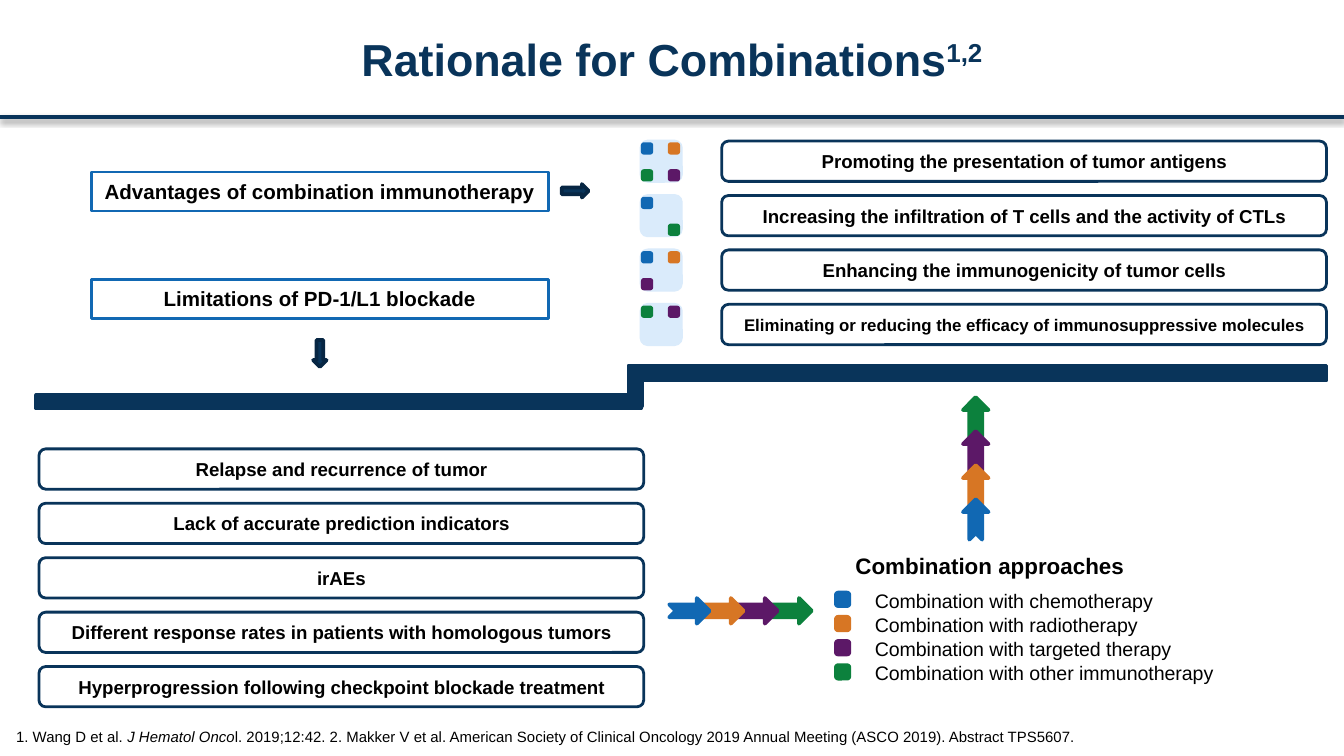
"""Builds the slide on the rationale for combination immunotherapy."""
from lxml import etree
from pptx import Presentation
from pptx.dml.color import RGBColor
from pptx.enum.shapes import MSO_CONNECTOR, MSO_SHAPE
from pptx.enum.text import MSO_ANCHOR, PP_ALIGN
from pptx.oxml.ns import qn
from pptx.util import Inches, Pt

RECT = MSO_SHAPE.RECTANGLE
ROUND = MSO_SHAPE.ROUNDED_RECTANGLE
ARROW = MSO_SHAPE.RIGHT_ARROW
NOTCHED = MSO_SHAPE.NOTCHED_RIGHT_ARROW
STRAIGHT = MSO_CONNECTOR.STRAIGHT
LEFT, CENTER = PP_ALIGN.LEFT, PP_ALIGN.CENTER
TOP, MIDDLE, BOTTOM = MSO_ANCHOR.TOP, MSO_ANCHOR.MIDDLE, MSO_ANCHOR.BOTTOM

COLORS = {
    "navy": "09345A", "dark": "072643", "white": "FFFFFF", "black": "000000",
    "pale": "DAEBFB", "chemo": "1168B3", "radio": "D77624",
    "targeted": "5C1867", "immuno": "0C813D",
}

prs = Presentation()
prs.slide_width = Inches(10)
prs.slide_height = prs.slide_width * 9 // 16
s = prs.slides.add_slide(prs.slide_layouts[6])


def add_shape(kind, x, y, w, h, fill, line, weight=2, rotation=0):
    sp = s.shapes.add_shape(kind, Inches(x), Inches(y), Inches(w), Inches(h))
    sp.shadow.inherit = False
    sp.rotation = rotation
    if fill:
        sp.fill.solid()
        sp.fill.fore_color.rgb = RGBColor.from_string(COLORS[fill])
    else:
        sp.fill.background()
    sp.line.color.rgb = RGBColor.from_string(COLORS[line])
    sp.line.width = Pt(weight)
    return sp


def add_text(text, sp=None, box=None, size=10, bold=False, color="black",
             align=CENTER, anchor=MIDDLE, margins=(0.1, 0.05, 0.1, 0.05)):
    sp = sp or s.shapes.add_textbox(*[Inches(v) for v in box])
    tf = sp.text_frame
    tf.word_wrap = True
    tf.vertical_anchor = anchor
    tf.margin_left, tf.margin_top, tf.margin_right, tf.margin_bottom = [
        Inches(m) for m in margins]
    p = tf.paragraphs[0]
    p.alignment = align
    for part in [text] if isinstance(text, str) else text:
        r = p.add_run()
        r.text = part
        r.font.name = "Arial"
        r.font.size = Pt(size)
        r.font.bold = bold
        r.font.color.rgb = RGBColor.from_string(COLORS[color])
    return p.runs


rule = s.shapes.add_connector(STRAIGHT, 0, Inches(0.87), prs.slide_width, Inches(0.87))
rule.line.color.rgb = RGBColor.from_string(COLORS["navy"])
rule.line.width = Pt(2)
effects = etree.SubElement(rule.element.spPr, qn("a:effectLst"))
shadow = etree.SubElement(
    effects, qn("a:outerShdw"), blurRad=str(Pt(3.1)), dist=str(Pt(1.6)),
    dir="5400000", rotWithShape="0")
shade = etree.SubElement(shadow, qn("a:srgbClr"), val=COLORS["black"])
etree.SubElement(shade, qn("a:alpha"), val="38000")

title = add_text(["Rationale for Combinations", "1,2"], box=(0.1, 0.03, 9.8, 0.81),
                 size=24, bold=True, color="navy")
title[1].font._element.set("baseline", "30000")

citation = add_text(
    ["1. Wang D et al. ", "J Hematol Onco",
     "l. 2019;12:42. 2. Makker V et al. American Society of Clinical Oncology "
     "2019 Annual Meeting (ASCO 2019). Abstract TPS5607."],
    box=(0.07, 5.28, 8.5, 0.27), size=8, align=LEFT, anchor=BOTTOM,
    margins=(0.05, 0.05, 0.1, 0))
citation[1].font.italic = True

ROW_STEP = 1.62 / 4
limitations = [
    "Relapse and recurrence of tumor",
    "Lack of accurate prediction indicators",
    "irAEs",
    "Different response rates in patients with homologous tumors",
    "Hyperprogression following checkpoint blockade treatment",
]
for i, text in enumerate(limitations):
    sp = add_shape(ROUND, 0.29, 3.34 + i * ROW_STEP, 4.5, 0.3, "white", "navy", 1.5)
    add_text(text, sp=sp, bold=True)

advantages = [
    ("Promoting the presentation of tumor antigens", 10,
     [("chemo", 0, 0), ("radio", 1, 0), ("targeted", 1, 1), ("immuno", 0, 1)]),
    ("Increasing the infiltration of T cells and the activity of CTLs", 10,
     [("chemo", 0, 0), ("immuno", 1, 1)]),
    ("Enhancing the immunogenicity of tumor cells", 10,
     [("chemo", 0, 0), ("radio", 1, 0), ("targeted", 0, 1)]),
    ("Eliminating or reducing the efficacy of immunosuppressive molecules", 9,
     [("immuno", 0, 0), ("targeted", 1, 0)]),
]
for i, (text, size, markers) in enumerate(advantages):
    y = 1.05 + i * ROW_STEP
    sp = add_shape(ROUND, 5.37, y, 4.5, 0.3, "white", "navy", 1.5)
    add_text(text, sp=sp, size=size, bold=True)
    add_shape(ROUND, 4.77, y, 0.3, 0.3, "pale", "pale", 1.5)
    for color, col, row in markers:
        add_shape(ROUND, 4.78 + col * 0.2, y + 0.02 + row * 0.2, 0.07, 0.07,
                  color, color, 1.5)

for y, text in [(1.28, "Advantages of combination immunotherapy"),
                (2.08, "Limitations of PD-1/L1 blockade")]:
    sp = add_shape(RECT, 0.68, y, 3.4, 0.29, None, "chemo", 1.5)
    add_text(text, sp=sp, size=11, bold=True, anchor=TOP)
add_shape(ARROW, 4.18, 1.37, 0.2, 0.1, "navy", "dark")
add_shape(ARROW, 2.28, 2.58, 0.2, 0.1, "navy", "dark", rotation=90)

for x, y, w, h in [(4.68, 2.72, 5.19, 0.11), (4.68, 2.72, 0.1, 0.3),
                   (0.27, 2.94, 4.5, 0.1)]:
    add_shape(RECT, x, y, w, h, "navy", "navy")

add_text("Combination approaches", box=(6.04, 4.06, 2.65, 0.3), size=12,
         bold=True, anchor=TOP)
approaches = [
    ("chemo", "Combination with chemotherapy", 2.26),
    ("radio", "Combination with radiotherapy", 2.26),
    ("targeted", "Combination with targeted therapy", 2.26),
    ("immuno", "Combination with other immunotherapy", 2.94),
]
for i, (color, text, width) in enumerate(approaches):
    y = 4.38 + i * 0.18
    add_shape(ROUND, 6.22, y + 0.03, 0.1, 0.1, color, color)
    add_text(text, box=(6.51, y, width, 0.18), size=10.5, align=LEFT, anchor=TOP,
             margins=(0, 0, 0, 0))

ARROW_STEP = 0.76 / 3
for i in reversed(range(len(approaches))):
    color = approaches[i][0]
    add_shape(NOTCHED, 4.98 + i * ARROW_STEP, 4.45, 0.3, 0.19, color, color)
    add_shape(NOTCHED, 7.11, 3.77 - i * ARROW_STEP, 0.3, 0.19, color, color,
              rotation=270)

prs.save("out.pptx")
